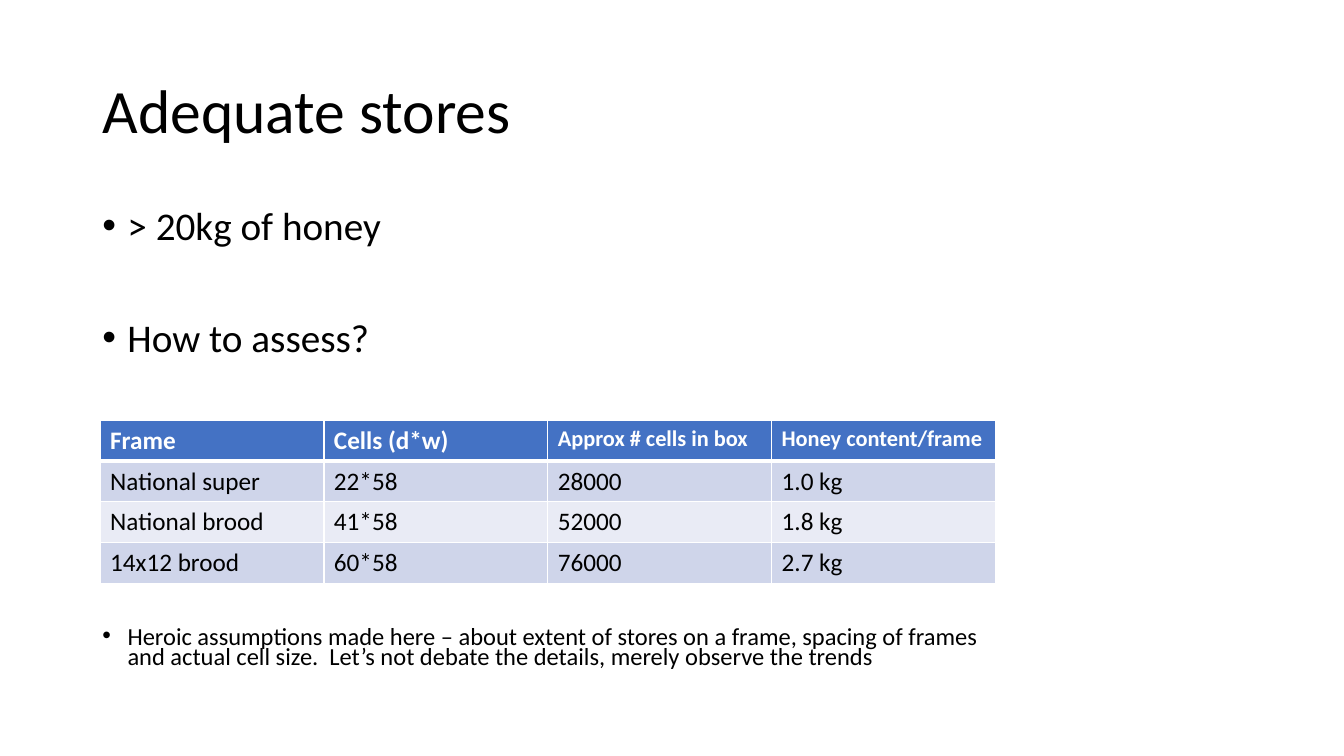
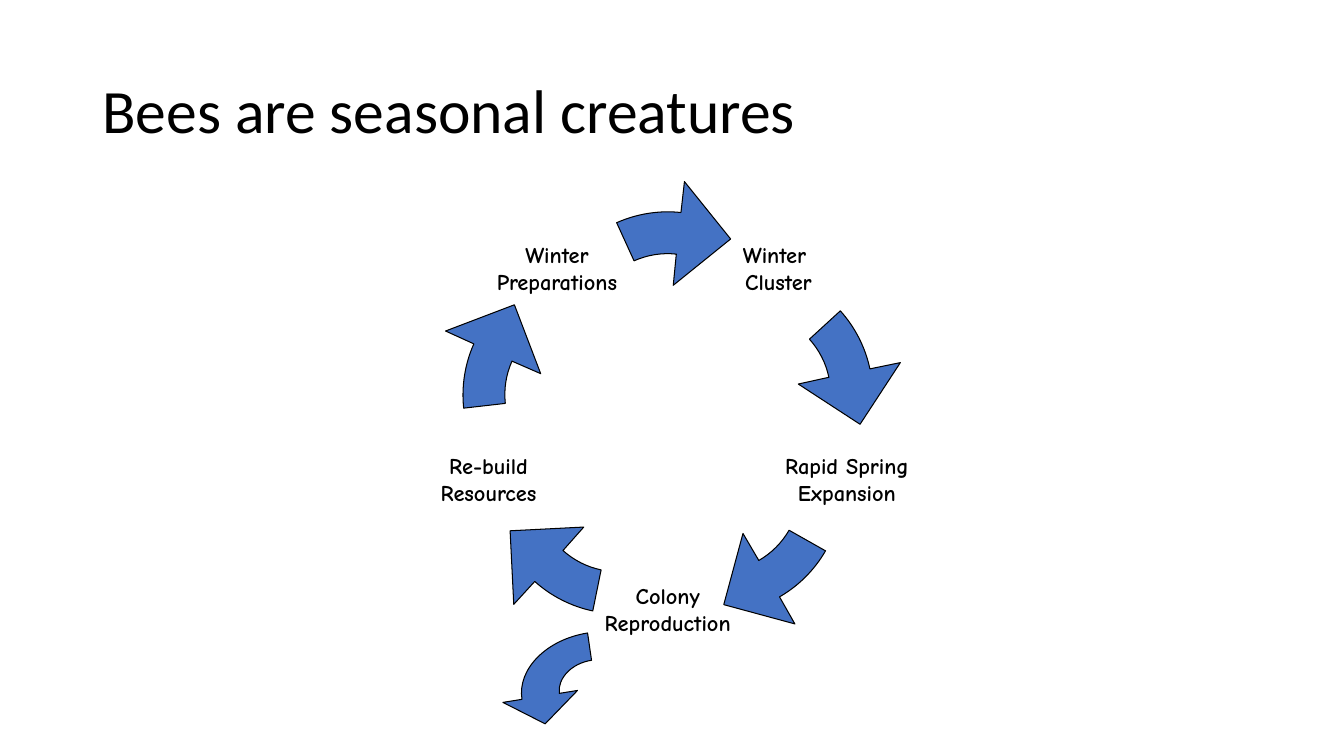
import math
from dataclasses import dataclass
from typing import NamedTuple

import pptx
import pptx.dml.color
import pptx.enum.shapes
import pptx.enum.text
import pptx.oxml
import pptx.oxml.ns
import pptx.presentation
import pptx.slide
import pptx.table
import pptx.text.text
import pptx.util

Pt = pptx.util.Pt
RGBColor = pptx.dml.color.RGBColor
Align = pptx.enum.text.PP_ALIGN
Anchor = pptx.enum.text.MSO_ANCHOR
NAMESPACE = pptx.oxml.ns.nsdecls("a")


@dataclass(frozen=True)
class Theme:
    font: str = "Calibri"
    label_font: str = "Comic Neue"
    black: str = "000000"
    white: str = "FFFFFF"
    blue: str = "4472C4"
    bands: tuple[str, str] = ("CFD5EA", "E9EBF5")
    title_size: float = 44
    body_size: float = 28
    table_size: float = 18
    small_header_size: float = 16
    note_size: float = 17.5
    label_size: float = 16


class Box(NamedTuple):
    left: float
    top: float
    width: float
    height: float


class Point(NamedTuple):
    x: float
    y: float


class Bullet(NamedTuple):
    text: str
    size: float
    line_spacing: float
    space_before: float = 0


class Stroke(NamedTuple):
    """One outline command; points are offsets from the arrow's center."""

    command: str
    points: list[Point]


class Arrow(NamedTuple):
    center: Point
    width: float
    height: float
    rotation: float
    outline: list[Stroke]


THEME = Theme()
MARGIN = 66
TITLE_BOX = Box(MARGIN, 28.8, 828, 104.4)
BODY_BOX = Box(MARGIN, 144, 828, 133)
TABLE_BOX = Box(71.5, 300.2, 639.6, 116.6)
NOTE_BOX = Box(MARGIN, 445.7, 646, 57)

BODY = [
    Bullet("> 20kg of honey", THEME.body_size, 0.9),
    Bullet("How to assess?", THEME.body_size, 0.9, 49.5),
]
NOTE = [
    Bullet(
        "Heroic assumptions made here – about extent of stores on a frame, "
        "spacing of frames and actual cell size.  Let’s not debate the details, "
        "merely observe the trends",
        THEME.note_size,
        0.7,
    )
]
FRAMES = [
    ["Frame", "Cells (d*w)", "Approx # cells in box", "Honey content/frame"],
    ["National super", "22*58", "28000", "1.0 kg"],
    ["National brood", "41*58", "52000", "1.8 kg"],
    ["14x12 brood", "60*58", "76000", "2.7 kg"],
]

CYCLE_CENTER = Point(477, 300.5)
ARROW_RADIUS = 59.6
ARROW_SIZE = 179.3
LABEL_RADIUS = 134.6
LABEL_SIZE = 66
STAGES = [
    ("Winter ", "Cluster"),
    ("Rapid Spring", "Expansion"),
    ("Colony", "Reproduction"),
    ("Re-build", "Resources"),
    ("Winter", "Preparations"),
]
STEP = 360 / len(STAGES)
CYCLE_OUTLINE = [
    Stroke("moveTo", [Point(6.1, -59.4)]),
    Stroke("cubicBezTo", [Point(-4.3, -60.5), Point(-14.6, -58.8), Point(-24.1, -54.6)]),
    Stroke("lnTo", [Point(-36.5, -81.8)]),
    Stroke("cubicBezTo", [Point(-22.2, -88.2), Point(-6.2, -90.8), Point(9.4, -89.1)]),
    Stroke("lnTo", [Point(11.9, -111.2)]),
    Stroke("lnTo", [Point(44.9, -70.2)]),
    Stroke("lnTo", [Point(3.9, -37.1)]),
]
SWARM_OUTLINE = [
    Stroke("moveTo", [Point(-27, 0)]),
    Stroke("cubicBezTo", [Point(-26.6, -10.7), Point(-15.1, -19.8), Point(-0.5, -19.7)]),
    Stroke("lnTo", [Point(-0.2, -39.4)]),
    Stroke("cubicBezTo", [Point(-30.2, -39.4), Point(-54, -21.7), Point(-54, 0)]),
    Stroke("lnTo", [Point(-67.8, 0)]),
    Stroke("lnTo", [Point(-40.4, 19.9)]),
    Stroke("lnTo", [Point(-13.8, 0)]),
]
SWARM_ARROW = Arrow(Point(426.2, 491), 108, 79.2, 350.9, SWARM_OUTLINE)


def color(value: str) -> RGBColor:
    return RGBColor.from_string(value)


def set_font(
    paragraph: pptx.text.text._Paragraph,
    size: float,
    value: str = THEME.black,
    bold: bool = False,
    name: str = THEME.font,
) -> None:
    font = paragraph.font
    font.name, font.size, font.bold = name, Pt(size), bold
    font.color.rgb = color(value)


def add_titled_slide(
    presentation: pptx.presentation.Presentation, text: str
) -> pptx.slide.Slide:
    slide = presentation.slides.add_slide(presentation.slide_layouts[5])
    title = slide.shapes.title
    title.left, title.top, title.width, title.height = map(Pt, TITLE_BOX)
    frame = title.text_frame
    frame.text = text
    frame.auto_size = pptx.enum.text.MSO_AUTO_SIZE.NONE
    frame.vertical_anchor = Anchor.MIDDLE
    paragraph = frame.paragraphs[0]
    paragraph.alignment = Align.LEFT
    paragraph.line_spacing = 0.9
    set_font(paragraph, THEME.title_size)
    return slide


def add_bullets(slide: pptx.slide.Slide, box: Box, bullets: list[Bullet]) -> None:
    frame = slide.shapes.add_textbox(*map(Pt, box)).text_frame
    frame.word_wrap = True
    frame.text = "\n".join(bullet.text for bullet in bullets)
    for paragraph, bullet in zip(frame.paragraphs, bullets):
        properties = paragraph._p.get_or_add_pPr()
        properties.set("marL", str(Pt(18)))
        properties.set("indent", str(Pt(-18)))
        for mark in ('buFont typeface="Arial"', 'buChar char="•"'):
            properties.append(pptx.oxml.parse_xml(f"<a:{mark} {NAMESPACE}/>"))
        paragraph.line_spacing = bullet.line_spacing
        paragraph.space_before = Pt(bullet.space_before)
        set_font(paragraph, bullet.size)


def set_borders(cell: pptx.table._Cell, top: float, bottom: float) -> None:
    """Draw white borders; call before the cell gets its fill."""
    properties = cell._tc.get_or_add_tcPr()
    for side, width in (("L", 1), ("R", 1), ("T", top), ("B", bottom)):
        properties.append(
            pptx.oxml.parse_xml(
                f'<a:ln{side} {NAMESPACE} w="{Pt(width)}">'
                f'<a:solidFill><a:srgbClr val="{THEME.white}"/></a:solidFill>'
                f"</a:ln{side}>"
            )
        )


def add_frame_table(slide: pptx.slide.Slide) -> None:
    table = slide.shapes.add_table(
        len(FRAMES), len(FRAMES[0]), *map(Pt, TABLE_BOX)
    ).table
    table.horz_banding = False
    for row_index, row in enumerate(FRAMES):
        header = row_index == 0
        fill = THEME.blue if header else THEME.bands[(row_index - 1) % 2]
        for column_index, text in enumerate(row):
            cell = table.cell(row_index, column_index)
            cell.text = text
            set_borders(cell, 3 if row_index == 1 else 1, 3 if header else 1)
            cell.fill.solid()
            cell.fill.fore_color.rgb = color(fill)
            small = header and column_index >= 2
            set_font(
                cell.text_frame.paragraphs[0],
                THEME.small_header_size if small else THEME.table_size,
                THEME.white if header else THEME.black,
                header,
            )


def around_cycle(radius: float, angle: float) -> Point:
    """Find a place on the cycle; angles run clockwise from the top."""
    turn = math.radians(angle)
    return Point(
        CYCLE_CENTER.x + radius * math.sin(turn),
        CYCLE_CENTER.y - radius * math.cos(turn),
    )


def centered_box(center: Point, width: float, height: float) -> Box:
    return Box(center.x - width / 2, center.y - height / 2, width, height)


def add_arrow(slide: pptx.slide.Slide, arrow: Arrow) -> None:
    """Frame the arrow with a freeform, then give it its curved outline."""
    left, top, width, height = map(
        Pt, centered_box(arrow.center, arrow.width, arrow.height)
    )
    builder = slide.shapes.build_freeform(left, top)
    builder.add_line_segments(
        [(left + width, top), (left + width, top + height), (left, top + height)]
    )
    shape = builder.convert_to_shape()
    geometry = shape._element.xpath(".//a:pathLst/a:path")[0]
    for child in list(geometry):
        geometry.remove(child)
    for command, points in arrow.outline:
        corners = "".join(
            f'<a:pt x="{Pt(point.x + arrow.width / 2)}" '
            f'y="{Pt(point.y + arrow.height / 2)}"/>'
            for point in points
        )
        geometry.append(
            pptx.oxml.parse_xml(f"<a:{command} {NAMESPACE}>{corners}</a:{command}>")
        )
    geometry.append(pptx.oxml.parse_xml(f"<a:close {NAMESPACE}/>"))
    shape.rotation = arrow.rotation
    shape.shadow.inherit = False
    shape.fill.solid()
    shape.fill.fore_color.rgb = color(THEME.blue)
    shape.line.color.rgb = color(THEME.black)
    shape.line.width = Pt(0.75)


def add_stage_label(
    slide: pptx.slide.Slide, lines: tuple[str, str], center: Point
) -> None:
    shape = slide.shapes.add_shape(
        pptx.enum.shapes.MSO_SHAPE.RECTANGLE,
        *map(Pt, centered_box(center, LABEL_SIZE, LABEL_SIZE)),
    )
    shape.shadow.inherit = False
    shape.fill.background()
    shape.line.fill.background()
    frame = shape.text_frame
    frame.margin_left = frame.margin_right = 0
    frame.margin_top = frame.margin_bottom = 0
    frame.word_wrap = False
    frame.vertical_anchor = Anchor.MIDDLE
    frame.text = "\n".join(lines)
    for paragraph in frame.paragraphs:
        paragraph.alignment = Align.CENTER
        set_font(paragraph, THEME.label_size, bold=True, name=THEME.label_font)


def add_season_cycle(slide: pptx.slide.Slide) -> None:
    for index in range(len(STAGES)):
        angle = index * STEP
        center = around_cycle(ARROW_RADIUS, angle)
        add_arrow(slide, Arrow(center, ARROW_SIZE, ARROW_SIZE, angle, CYCLE_OUTLINE))
    for index, lines in enumerate(STAGES):
        add_stage_label(slide, lines, around_cycle(LABEL_RADIUS, (index + 0.5) * STEP))


def main() -> None:
    presentation = pptx.Presentation()
    presentation.slide_width, presentation.slide_height = Pt(960), Pt(540)

    stores = add_titled_slide(presentation, "Adequate stores")
    add_bullets(stores, BODY_BOX, BODY)
    add_frame_table(stores)
    add_bullets(stores, NOTE_BOX, NOTE)

    seasons = add_titled_slide(presentation, "Bees are seasonal creatures")
    add_season_cycle(seasons)
    add_arrow(seasons, SWARM_ARROW)

    presentation.save("out.pptx")


if __name__ == "__main__":
    main()
